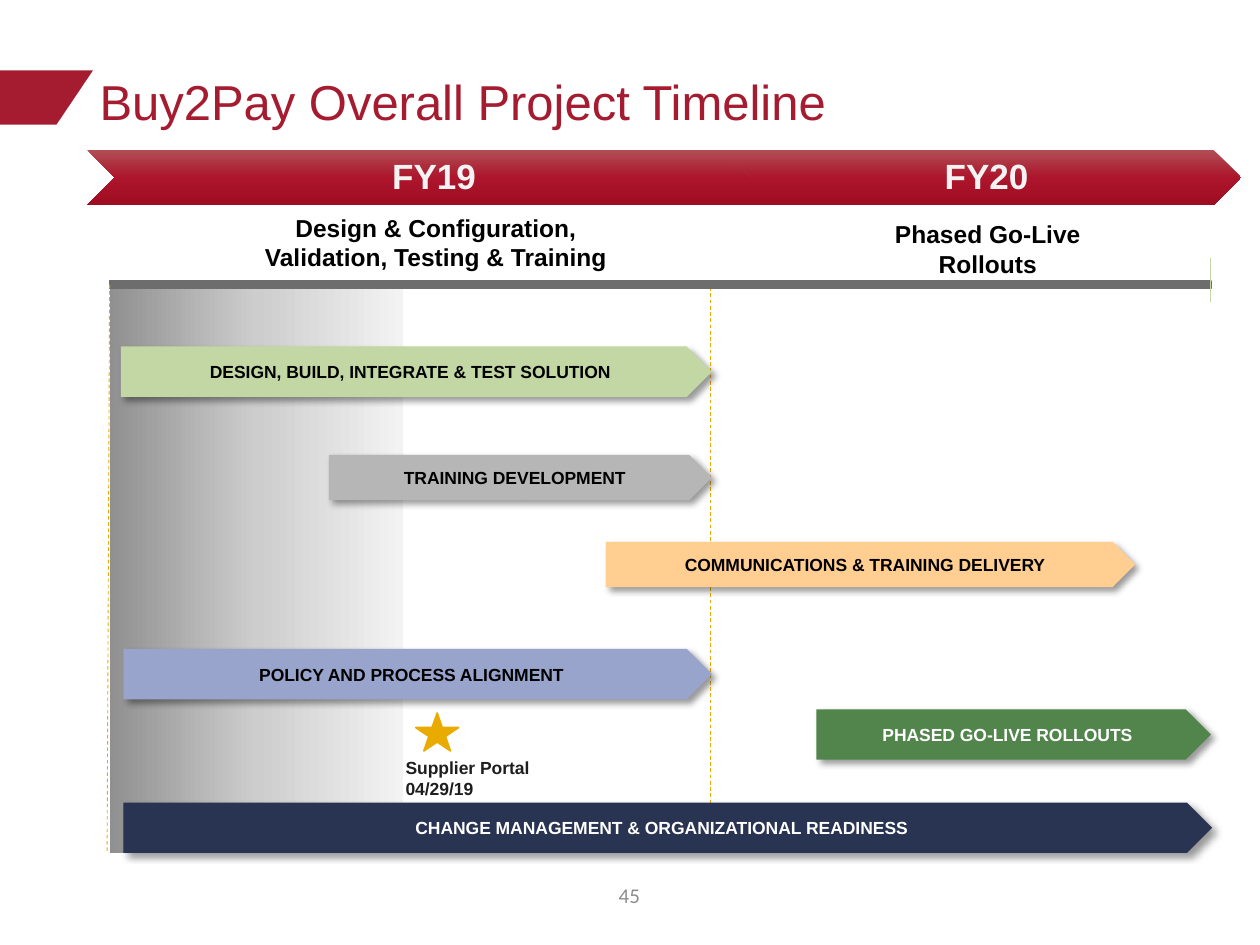
from lxml.etree import SubElement
from pptx import Presentation
from pptx.dml.color import RGBColor
from pptx.enum.dml import MSO_LINE
from pptx.enum.shapes import MSO_CONNECTOR, MSO_SHAPE
from pptx.enum.text import MSO_ANCHOR, MSO_AUTO_SIZE, PP_ALIGN
from pptx.oxml.ns import qn
from pptx.util import Pt

PX = 9144  # 100 px to the inch

WHITE = RGBColor(0xFF, 0xFF, 0xFF)
BLACK = RGBColor(0x00, 0x00, 0x00)
CRIMSON = RGBColor(0xA5, 0x1C, 0x30)
GOLD = RGBColor(0xEA, 0xAB, 0x00)
GREEN = RGBColor(0x52, 0x85, 0x4C)
LIGHT_GREEN = RGBColor(0xC3, 0xD7, 0xA4)
GRAY = RGBColor(0xB6, 0xB6, 0xB6)
DARK_GRAY = RGBColor(0x6D, 0x6D, 0x6D)
PAGE_GRAY = RGBColor(0x8D, 0x8D, 0x8D)
PALE = RGBColor(0xF3, 0xF3, 0xF3)
ORANGE = RGBColor(0xFF, 0xCE, 0x90)
BLUE = RGBColor(0x98, 0xA4, 0xCB)
NAVY = RGBColor(0x29, 0x33, 0x52)
INK = RGBColor(0x1E, 0x1E, 0x1E)
GRAY_FADE = (RGBColor(0x90, 0x90, 0x90), RGBColor(0xCD, 0xCD, 0xCD), PALE)
RED_FADE = (RGBColor(0xB1, 0x4E, 0x55), RGBColor(0xAC, 0x15, 0x2B),
            RGBColor(0x9F, 0x0D, 0x22))


def emu(*values):
    return [v * PX for v in values]


def write(sp, lines, size, color, align=PP_ALIGN.CENTER, bold=True,
          font="Arial", spacing=None, **frame):
    tf = sp.text_frame
    for name, value in {"word_wrap": True, **frame}.items():
        setattr(tf, name, value)
    for i, line in enumerate(lines):
        p = tf.paragraphs[0] if i == 0 else tf.add_paragraph()
        p.alignment, p.line_spacing = align, spacing
        r = p.add_run()
        r.text = line
        for name, value in {"name": font, "size": Pt(size), "bold": bold}.items():
            setattr(r.font, name, value)
        r.font.color.rgb = color


def add_text(shapes, box, lines, size, color, **style):
    sp = shapes.add_textbox(*emu(*box))
    write(sp, lines, size, color, **style)
    return sp


def add_shape(shapes, kind, box, color=None, line=None):
    sp = shapes.add_shape(kind, *emu(*box))
    sp.shadow.inherit = False
    if color is not None:
        sp.fill.solid()
        sp.fill.fore_color.rgb = color
    if line is None:
        sp.line.fill.background()
    else:
        sp.line.color.rgb = line
        sp.line.width = Pt(1)
    return sp


def add_line(shapes, start, end, color, dash=None):
    s = shapes.add_connector(MSO_CONNECTOR.STRAIGHT, *emu(*start, *end))
    s.line.color.rgb = color
    s.line.width = Pt(0.5)
    if dash is not None:
        s.line.dash_style = dash
    SubElement(s._element.spPr, qn("a:effectLst"))
    return s


def fade(sp, colors, angle):
    """Fill with three stops at 0, 50 and 100 percent; angle runs clockwise."""
    sp.fill.gradient()
    grad = sp._element.spPr.find(qn("a:gradFill"))
    for child in list(grad):
        grad.remove(child)
    stops = SubElement(grad, qn("a:gsLst"))
    for i, color in enumerate(colors):
        stop = SubElement(stops, qn("a:gs"), pos=str(i * 50000))
        SubElement(stop, qn("a:srgbClr"), val=str(color))
    SubElement(grad, qn("a:lin"), ang=str(angle * 60000), scaled="0")


def drop_shadow(sp):
    effects = sp._element.spPr.find(qn("a:effectLst"))
    shadow = SubElement(effects, qn("a:outerShdw"), blurRad=str(Pt(4)),
                        dist=str(Pt(3)), dir="2700000", algn="tl", rotWithShape="0")
    color = SubElement(shadow, qn("a:srgbClr"), val=str(BLACK))
    SubElement(color, qn("a:alpha"), val="40000")


def add_heading(s, x, y, w, h):
    # Slanted tab: a red block with its corner cut by a white triangle
    add_shape(s.shapes, MSO_SHAPE.RECTANGLE, (0, y + 16, 77, 43), CRIMSON)
    cut = add_shape(s.shapes, MSO_SHAPE.RIGHT_TRIANGLE, (34, y + 19, 52, 35), WHITE)
    cut.rotation = 270
    title = s.shapes.title
    title.left, title.top, title.width, title.height = emu(x, y, w, h)
    write(title, ["Buy2Pay Overall Project Timeline"], 28, CRIMSON,
          align=PP_ALIGN.LEFT, bold=False, spacing=0.9,
          vertical_anchor=MSO_ANCHOR.MIDDLE, auto_size=MSO_AUTO_SIZE.NONE)


def add_years(s, x, y, h):
    group = s.shapes.add_group_shape().shapes
    notch = h // 2
    for label, left, w in (("FY19", 0, 545), ("FY20", 506, 410)):
        chevron = add_shape(group, MSO_SHAPE.CHEVRON, (x + left, y, w, h))
        fade(chevron, RED_FADE, 90)
        add_text(group, (x + left + notch, y, w - 2 * notch, h), [label], 20, PALE,
                 spacing=0.9, vertical_anchor=MSO_ANCHOR.MIDDLE, margin_left=9 * PX,
                 margin_right=3 * PX, margin_top=3 * PX, margin_bottom=3 * PX)


def add_phases(s, x, y):
    for text, dx, dy, w in (
            ("Design & Configuration, Validation, Testing & Training", 0, 0, 304),
            ("Phased Go-Live Rollouts", 488, 5, 204)):
        add_text(s.shapes, (x + dx, y + dy, w, 57), [text], 14, BLACK)


def add_frame(s, x, y, w, h):
    add_line(s.shapes, (x + 477, y), (x + 477, y + 438), GOLD, MSO_LINE.DASH)
    elapsed = add_shape(s.shapes, MSO_SHAPE.RECTANGLE, (x, y + 6, 233, h - 6))
    fade(elapsed, GRAY_FADE, 0)
    # Header rule with its end tick
    group = s.shapes.add_group_shape().shapes
    rule = add_shape(group, MSO_SHAPE.RECTANGLE, (x, y, w, 6), DARK_GRAY, DARK_GRAY)
    add_line(group, (x + w, y - 18), (x + w, y + 17), LIGHT_GREEN)
    start = add_line(s.shapes, (x, y + 3), (x - 2, y + h), GOLD, MSO_LINE.DASH)
    start.begin_connect(rule, 1)


def add_tasks(s, x, y):
    tasks = (
        ("DESIGN, BUILD, INTEGRATE & TEST SOLUTION", 9, 52, 469, 40, LIGHT_GREEN, BLACK),
        ("TRAINING DEVELOPMENT", 174, 138, 304, 36, GRAY, BLACK),
        ("COMMUNICATIONS & TRAINING DELIVERY", 394, 207, 420, 36, ORANGE, BLACK),
        ("POLICY AND PROCESS ALIGNMENT", 11, 292, 467, 40, BLUE, BLACK),
        ("PHASED GO-LIVE ROLLOUTS", 561, 340, 313, 40, GREEN, WHITE),
        ("CHANGE MANAGEMENT & ORGANIZATIONAL READINESS", 11, 414, 864, 40, NAVY, WHITE),
    )
    for text, dx, dy, w, h, color, ink in tasks:
        bar = add_shape(s.shapes, MSO_SHAPE.PENTAGON, (x + dx, y + dy, w, h), color)
        drop_shadow(bar)
        write(bar, [text], 10, ink, vertical_anchor=MSO_ANCHOR.MIDDLE)


def add_milestone(s, x, y):
    add_shape(s.shapes, MSO_SHAPE.STAR_5_POINT, (x + 18, y, 34, 30), GOLD, GOLD)
    add_text(s.shapes, (x, y + 30, 122, 44), ["Supplier Portal", "04/29/19"], 10, INK,
             align=PP_ALIGN.LEFT)


def main():
    prs = Presentation()
    prs.slide_width, prs.slide_height = emu(1000, 750)
    s = prs.slides.add_slide(prs.slide_layouts[5])
    add_heading(s, 69, 40, 862, 86)
    add_frame(s, 87, 223, 874, 454)
    add_phases(s, 194, 164)
    add_years(s, 69, 119, 44)
    add_tasks(s, 87, 223)
    add_milestone(s, 312, 566)
    # Page number
    add_text(s.shapes, (479, 692, 41, 40), ["45"], 12, PAGE_GRAY, bold=False,
             font="Calibri", spacing=0.9, vertical_anchor=MSO_ANCHOR.MIDDLE)
    prs.save("out.pptx")


if __name__ == "__main__":
    main()
